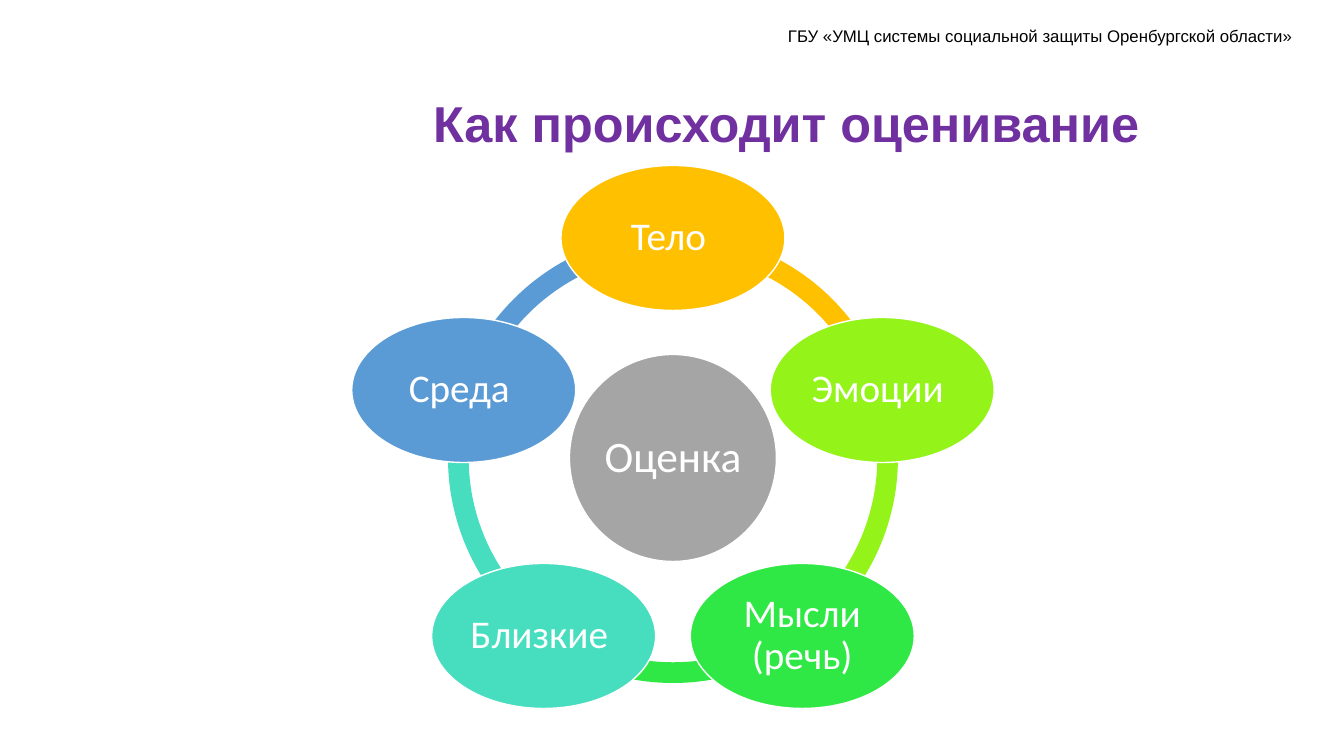
import math
from dataclasses import dataclass

from pptx import Presentation
from pptx import util as u
from pptx.dml.color import RGBColor
from pptx.enum import shapes, text


@dataclass(frozen=True)
class Theme:
    black: str = "000000"
    white: str = "FFFFFF"
    purple: str = "7030A0"
    gray: str = "A5A5A5"
    amber: str = "FFC000"
    lime: str = "94F319"
    green: str = "30E845"
    teal: str = "46DEBF"
    blue: str = "5B9BD5"
    heading_font: str = "Arial"
    diagram_font: str = "Calibri"
    header_size: int = 12
    title_size: int = 36
    hub_size: int = 31
    node_size: int = 28


def px(length):
    return u.Emu(round(length * 914400 / 100.8))


def write(shape, content, *, size, color, font, bold=False, inset=(10, 5),
          align=text.PP_ALIGN.CENTER, anchor=text.MSO_ANCHOR.MIDDLE, spacing=0.9):
    frame = shape.text_frame
    frame.word_wrap = True
    frame.vertical_anchor = anchor
    frame.margin_left = frame.margin_right = px(inset[0])
    frame.margin_top = frame.margin_bottom = px(inset[1])
    paragraph = frame.paragraphs[0]
    paragraph.alignment = align
    paragraph.line_spacing = spacing
    run = paragraph.add_run()
    run.text = content
    run.font.name = font
    run.font.size = u.Pt(size)
    run.font.bold = bold
    run.font.color.rgb = RGBColor.from_string(color)


class SlideBuilder:
    def __init__(self, slide, theme):
        self.slide = slide
        self.theme = theme

    def textbox(self, left, top, width, height, content, **style):
        box = self.slide.shapes.add_textbox(px(left), px(top), px(width), px(height))
        write(box, content, font=self.theme.heading_font, **style)

    def centred_shape(self, kind, x, y, width, height, fill):
        shape = self.slide.shapes.add_shape(
            kind, px(x - width / 2), px(y - height / 2), px(width), px(height))
        shape.shadow.inherit = False
        shape.fill.solid()
        shape.fill.fore_color.rgb = RGBColor.from_string(fill)
        return shape

    def arc(self, x, y, diameter, start, end, fill):
        arc = self.centred_shape(shapes.MSO_SHAPE.BLOCK_ARC, x, y, diameter, diameter, fill)
        arc.line.fill.background()
        # Angles are stored in 1/60000 degree, adjustments in units of 100000
        for index, value in enumerate((start * 0.6, end * 0.6, 0.046)):
            arc.adjustments[index] = value

    def ellipse(self, x, y, width, height, fill, label, size):
        ellipse = self.centred_shape(shapes.MSO_SHAPE.OVAL, x, y, width, height, fill)
        ellipse.line.color.rgb = RGBColor.from_string(self.theme.white)
        ellipse.line.width = u.Pt(1)
        write(ellipse, label, size=size, color=self.theme.white,
              font=self.theme.diagram_font, inset=(4, 4))


def main():
    theme = Theme()
    presentation = Presentation()
    presentation.slide_width, presentation.slide_height = px(1344), px(756)
    slide = presentation.slides.add_slide(presentation.slide_layouts[6])
    builder = SlideBuilder(slide, theme)

    # Header and title
    builder.textbox(778, 21, 542, 30, "ГБУ «УМЦ системы социальной защиты Оренбургской области»",
                    size=theme.header_size, color=theme.black, spacing=1.0,
                    align=text.PP_ALIGN.LEFT, anchor=text.MSO_ANCHOR.TOP)
    builder.textbox(306, 66, 975, 121, "Как происходит оценивание ",
                    size=theme.title_size, color=theme.purple, bold=True)

    # Cycle: nodes clockwise from the top, each with the arc that leaves it
    center_x, center_y, radius = 673, 458, 220
    nodes = [
        ("Тело ", theme.amber),
        ("Эмоции ", theme.lime),
        ("Мысли (речь)", theme.green),
        ("Близкие ", theme.teal),
        ("Среда ", theme.blue),
    ]
    step = 360 / len(nodes)
    angles = [(270 + step * index) % 360 for index in range(len(nodes))]

    for angle, (label, color) in zip(angles, nodes):
        builder.arc(center_x, center_y, 450, angle, (angle + step) % 360, color)

    builder.ellipse(center_x, center_y, 207, 207, theme.gray, "Оценка ", theme.hub_size)

    for angle, (label, color) in zip(angles, nodes):
        x = center_x + radius * math.cos(math.radians(angle))
        y = center_y + radius * math.sin(math.radians(angle))
        builder.ellipse(x, y, 224, 145, color, label, theme.node_size)

    presentation.save("out.pptx")


if __name__ == "__main__":
    main()
